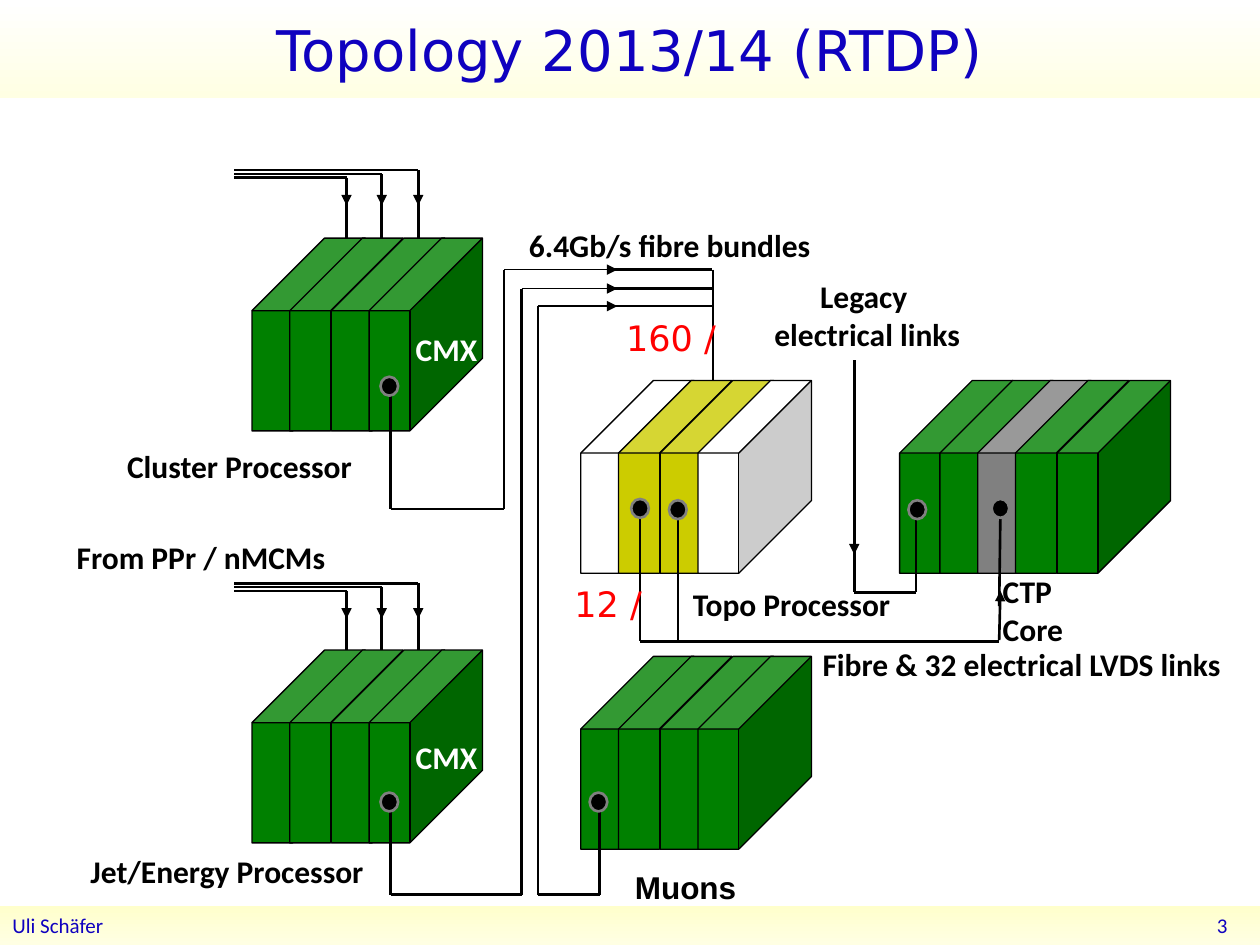
from dataclasses import dataclass
from itertools import pairwise

from lxml import etree
from pptx import Presentation
from pptx.dml.color import RGBColor
from pptx.enum.shapes import MSO_CONNECTOR, MSO_SHAPE
from pptx.enum.text import MSO_ANCHOR, PP_ALIGN
from pptx.oxml.ns import qn
from pptx.util import Inches, Pt

STRAIGHT = MSO_CONNECTOR.STRAIGHT
RECTANGLE, CUBE, OVAL = MSO_SHAPE.RECTANGLE, MSO_SHAPE.CUBE, MSO_SHAPE.OVAL
LEFT, CENTER, RIGHT = PP_ALIGN.LEFT, PP_ALIGN.CENTER, PP_ALIGN.RIGHT
TOP, MIDDLE = MSO_ANCHOR.TOP, MSO_ANCHOR.MIDDLE


@dataclass(frozen=True)
class Theme:
    black: RGBColor = RGBColor(0, 0, 0)
    white: RGBColor = RGBColor(255, 255, 255)
    grey: RGBColor = RGBColor(0x80, 0x80, 0x80)
    green: RGBColor = RGBColor(0, 0x80, 0)
    yellow: RGBColor = RGBColor(0xCC, 0xCC, 0)
    red: RGBColor = RGBColor(255, 0, 0)
    blue: RGBColor = RGBColor(0x0F, 0x01, 0xBF)
    title_band: tuple = (RGBColor(255, 255, 0xE3), RGBColor(255, 255, 255))
    footer_band: tuple = (RGBColor(255, 255, 0xCC), RGBColor(255, 255, 0xE3))
    display_font: str = "DejaVu Sans"
    label_font: str = "Calibri"
    muon_font: str = "Arial"
    title_size: Pt = Pt(32)
    count_size: Pt = Pt(20)
    label_size: Pt = Pt(18)
    footer_size: Pt = Pt(12)
    wire: Pt = Pt(1.5)
    thin: Pt = Pt(0.75)


theme = Theme()


def write_text(shape, text, font_name, size, color, bold=False, align=LEFT, anchor=TOP):
    shape.text_frame.vertical_anchor = anchor
    paragraph = shape.text_frame.paragraphs[0]
    paragraph.text = text
    paragraph.alignment = align
    paragraph.font.name = font_name
    paragraph.font.size = size
    paragraph.font.bold = bold
    paragraph.font.color.rgb = color


def add_wire(points, width=theme.wire, arrow=False):
    """Join the points with straight connectors, with an optional head on each."""
    for start, end in pairwise(points):
        connector = slide.shapes.add_connector(
            STRAIGHT, *(Inches(value) for value in (*start, *end)))
        connector.line.color.rgb = theme.black
        connector.line.width = width
        properties = connector.element.find(qn("p:spPr"))
        if arrow:
            etree.SubElement(properties.find(qn("a:ln")), qn("a:tailEnd"), type="triangle")
        etree.SubElement(properties, qn("a:effectLst"))


presentation = Presentation()
presentation.slide_width = Inches(10)
presentation.slide_height = Inches(7.5)
slide = presentation.slides.add_slide(presentation.slide_layouts[5])

# Title and footer bands
title = slide.shapes.title
title.left, title.top, title.width, title.height = 0, 0, Inches(10), Inches(0.78)
write_text(title, "Topology 2013/14 (RTDP)", theme.display_font, theme.title_size,
           theme.blue, align=CENTER, anchor=MIDDLE)
footer = slide.shapes.add_shape(RECTANGLE, 0, Inches(7.19), Inches(10), Inches(0.31))
footer.shadow.inherit = False
footer.line.fill.background()
write_text(footer, "Uli Schäfer", theme.label_font, theme.footer_size, theme.blue, anchor=MIDDLE)
for band, colors, angle in ((title, theme.title_band, 90), (footer, theme.footer_band, 270)):
    band.fill.gradient()
    band.fill.gradient_angle = angle
    for stop, color in zip(band.fill.gradient_stops, colors):
        stop.color.rgb = color
page_number = slide.shapes.add_textbox(Inches(7.73), Inches(7.18), Inches(2.11), Inches(0.32))
page_number.text_frame.word_wrap = True
write_text(page_number, "3", theme.label_font, theme.footer_size, theme.blue,
           align=RIGHT, anchor=MIDDLE)

# Inputs that run behind the crates
add_wire([(5.66, 2.14), (5.66, 3.16)])
for feed_top in (1.35, 4.63):
    entry = feed_top + 0.06
    for x, y in ((3.32, feed_top), (3.03, feed_top + 0.03), (2.75, entry)):
        add_wire([(1.86, y), (x, y)])
        if y < entry:
            add_wire([(x, y), (x, entry)])
        add_wire([(x, entry), (x, feed_top + 0.28)], arrow=True)
        add_wire([(x, feed_top + 0.21), (x, feed_top + 0.72)])

# Crates, each a row of overlapping modules
four_slots = (0, 0.3, 0.63, 0.93)
five_slots = (0, 0.32, 0.62, 0.92, 1.25)
all_green = [theme.green] * 4
crates = [
    (4.61, 5.21, four_slots, all_green),
    (2, 1.89, four_slots, all_green),
    (2, 5.16, four_slots, all_green),
    (4.61, 3.02, four_slots, [theme.white, theme.yellow, theme.yellow, theme.white]),
    (7.14, 3.02, five_slots, [theme.green, theme.green, theme.grey, theme.green, theme.green]),
]
for left, top, slots, colors in crates:
    crate = slide.shapes.add_group_shape()
    for slot, color in zip(slots, colors):
        module = crate.shapes.add_shape(
            CUBE, Inches(left + slot), Inches(top), Inches(0.9), Inches(1.53))
        module.adjustments[0] = 0.64
        module.shadow.inherit = False
        module.fill.solid()
        module.fill.fore_color.rgb = color
        module.line.color.rgb = theme.black
        module.line.width = theme.thin

# Fibre bundles into the topology processor
bundles = [
    ([(3.1, 3.02), (3.1, 4.04), (4, 4.04), (4, 2.14)], theme.thin),
    ([(3.1, 6.3), (3.1, 7.1), (4.14, 7.1), (4.14, 2.29)], theme.thin),
    ([(4.76, 6.37), (4.76, 7.1), (4.27, 7.1), (4.27, 2.43)], theme.wire),
]
for route, arrow_width in bundles:
    corner_x, y = route[-1]
    add_wire(route)
    add_wire([(corner_x, y), (4.9, y)], arrow_width, arrow=True)
    add_wire([(4.83, y), (5.65, y)])

# Links into the CTP core
add_wire([(5.08, 3.96), (5.08, 5.09), (7.93, 5.09)])
add_wire([(5.38, 3.96), (5.38, 5.09)])
add_wire([(7.93, 5.08), (7.94, 4.69)], arrow=True)
add_wire([(7.93, 4.81), (7.94, 4.08)])
add_wire([(6.78, 2.86), (6.78, 4.7), (7.27, 4.7), (7.27, 4.04)])
add_wire([(6.78, 4.18), (6.78, 4.4)], arrow=True)

# Ports
for left, top in ((3.02, 2.99), (3.02, 6.29), (4.68, 6.29), (5.01, 3.96),
                  (5.31, 3.97), (7.21, 3.97), (7.87, 3.96)):
    port = slide.shapes.add_shape(OVAL, Inches(left), Inches(top), Inches(0.14), Inches(0.15))
    port.shadow.inherit = False
    port.fill.solid()
    port.fill.fore_color.rgb = theme.black
    port.line.color.rgb = theme.grey
    port.line.width = theme.wire

# Labels
labels = [
    ("Topo Processor", 5.4, 4.57, 1.8, 0.28, theme.label_font, theme.black, LEFT),
    ("Muons", 4.94, 6.82, 1.01, 0.28, theme.muon_font, theme.black, LEFT),
    ("Legacy\n electrical links", 5.95, 2.13, 1.81, 0.72, theme.label_font, theme.black, CENTER),
    ("Cluster Processor", 0.91, 3.48, 2.12, 0.56, theme.label_font, theme.black, LEFT),
    ("CMX", 3.2, 2.55, 0.75, 0.27, theme.label_font, theme.white, LEFT),
    ("CTP\nCore", 7.86, 4.47, 0.75, 0.48, theme.label_font, theme.black, LEFT),
    ("Jet/Energy Processor", 0.62, 6.69, 2.4, 0.36, theme.label_font, theme.black, LEFT),
    ("CMX", 3.2, 5.79, 0.75, 0.27, theme.label_font, theme.white, LEFT),
    ("From PPr / nMCMs", 0.51, 4.2, 2.21, 0.39, theme.label_font, theme.black, LEFT),
    ("6.4Gb/s fibre bundles", 4.1, 1.72, 2.5, 0.34, theme.label_font, theme.black, LEFT),
    ("Fibre & 32 electrical LVDS links", 6.43, 5.05, 3.45, 0.34,
     theme.label_font, theme.black, LEFT),
]
for text, left, top, width, height, font_name, color, align in labels:
    label = slide.shapes.add_textbox(Inches(left), Inches(top), Inches(width), Inches(height))
    label.text_frame.word_wrap = False
    label.text_frame.margin_top = Inches(0.07)
    write_text(label, text, font_name, theme.label_size, color, bold=True, align=align)

# Fibre counts
for text, left, top in (("160 /", 4.87, 2.46), ("12 /", 4.46, 4.57)):
    count = slide.shapes.add_textbox(Inches(left), Inches(top), Inches(1.09), Inches(0.55))
    count.text_frame.word_wrap = True
    write_text(count, text, theme.display_font, theme.count_size, theme.red)

presentation.save("out.pptx")
